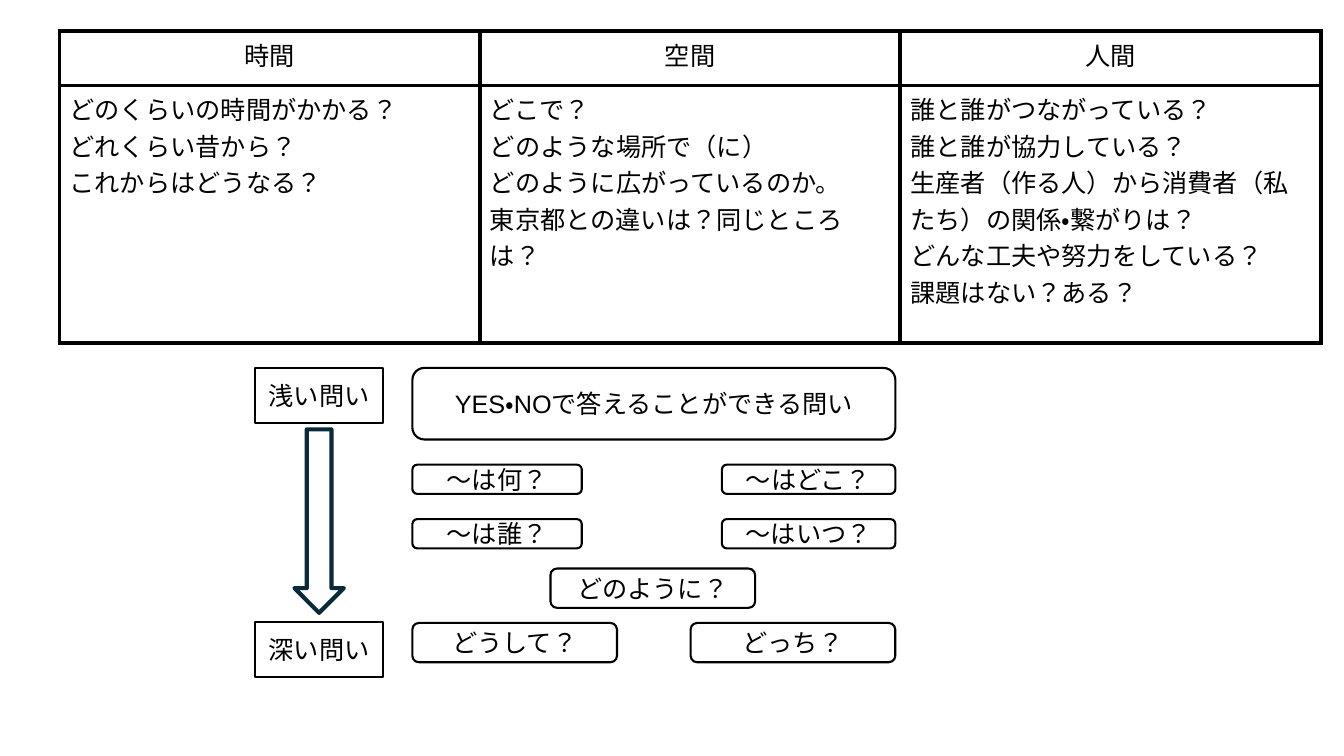
from lxml.etree import SubElement
from pptx import Presentation
from pptx.dml.color import RGBColor
from pptx.enum.lang import MSO_LANGUAGE_ID
from pptx.enum.shapes import MSO_SHAPE
from pptx.enum.text import MSO_ANCHOR, PP_ALIGN
from pptx.oxml.ns import qn
from pptx.util import Inches, Pt

COLORS = {"ink": "000000", "arrow": "092A39"}


def color(name):
    return RGBColor.from_string(COLORS[name])


def write(frame, text, font="Arial", size=18, ink="ink", align=PP_ALIGN.CENTER):
    """Fill a text frame, one paragraph for each line."""
    frame.word_wrap = True
    for i, line in enumerate(text.split("\n")):
        para = frame.paragraphs[0] if i == 0 else frame.add_paragraph()
        para.alignment = align
        run = para.add_run()
        run.text = line
        run.font.name = font
        run.font.size = Pt(size)
        run.font.color.rgb = color(ink)
        run.font.language_id = MSO_LANGUAGE_ID.JAPANESE


class Board:
    def __init__(self, slide, line=1.5, rule=3):
        self.slide = slide
        self.line = line
        self.rule = rule

    def shape(self, kind, x, y, w, h, ink="ink", line=None):
        item = self.slide.shapes.add_shape(
            kind, Inches(x), Inches(y), Inches(w), Inches(h))
        item.shadow.inherit = False
        item.fill.background()
        item.line.color.rgb = color(ink)
        item.line.width = Pt(line or self.line)
        return item

    def box(self, text, x, y, w, h, kind=MSO_SHAPE.ROUNDED_RECTANGLE, font="Arial"):
        frame = self.shape(kind, x, y, w, h).text_frame
        frame.margin_left = frame.margin_right = Inches(0.05)
        frame.margin_top = frame.margin_bottom = 0
        frame.vertical_anchor = MSO_ANCHOR.MIDDLE
        write(frame, text, font=font)

    def arrow(self, x, y, w, h):
        self.shape(MSO_SHAPE.DOWN_ARROW, x, y, w, h, ink="arrow", line=self.rule)

    def border(self, cell):
        props = cell._tc.get_or_add_tcPr()
        for side in ("a:lnL", "a:lnR", "a:lnT", "a:lnB"):
            edge = SubElement(props, qn(side), w=str(Pt(self.rule)))
            fill = SubElement(edge, qn("a:solidFill"))
            SubElement(fill, qn("a:srgbClr"), val=COLORS["ink"])

    def table(self, rows, x, y, wide, highs):
        cols = len(rows[0])
        grid = self.slide.shapes.add_table(
            len(rows), cols, Inches(x), Inches(y),
            Inches(wide * cols), Inches(sum(highs))).table
        grid.first_row = grid.horz_banding = False
        for col in grid.columns:
            col.width = Inches(wide)
        for r, (texts, high) in enumerate(zip(rows, highs)):
            grid.rows[r].height = Inches(high)
            for c, text in enumerate(texts):
                cell = grid.cell(r, c)
                self.border(cell)
                cell.fill.background()
                write(cell.text_frame, text,
                      align=PP_ALIGN.LEFT if r else PP_ALIGN.CENTER)


def main():
    deck = Presentation()
    deck.slide_width, deck.slide_height = Inches(13.33), Inches(7.5)
    board = Board(deck.slides.add_slide(deck.slide_layouts[6]))

    # Three viewpoints
    board.table([
        ["時間", "空間", "人間"],
        ["どのくらいの時間がかかる？\nどれくらい昔から？\nこれからはどうなる？",
         "どこで？\nどのような場所で（に）\nどのように広がっているのか。\n"
         "東京都との違いは？同じところは？",
         "誰と誰がつながっている？\n誰と誰が協力している？\n"
         "生産者（作る人）から消費者（私たち）の関係・繋がりは？\n"
         "どんな工夫や努力をしている？\n課題はない？ある？"],
    ], 0.59, 0.31, 4.17, [0.54, 2.55])

    # Questions, from shallow to deep
    left, right = 4.09, 8.88
    board.box("YES・NOで答えることができる問い", left, 3.65, right - left, 0.71)
    pairs = [
        ("〜は何？", "〜はどこ？", 4.61, 1.68, 1.72, 0.29),
        ("〜は誰？", "〜はいつ？", 5.15, 1.68, 1.72, 0.29),
        ("どうして？", "どっち？", 6.18, 2.03, 2.03, 0.39),
    ]
    for first, last, y, w1, w2, h in pairs:
        board.box(first, left, y, w1, h)
        board.box(last, right - w2, y, w2, h)
    board.box("どのように？", 5.46, 5.64, 2.03, 0.39)

    # Depth scale
    for text, y in (("浅い問い", 3.65), ("深い問い", 6.17)):
        board.box(text, 2.53, y, 1.27, 0.55, kind=MSO_SHAPE.RECTANGLE, font="Lato")
    board.arrow(2.92, 4.26, 0.49, 1.82)

    deck.save("out.pptx")


if __name__ == "__main__":
    main()
